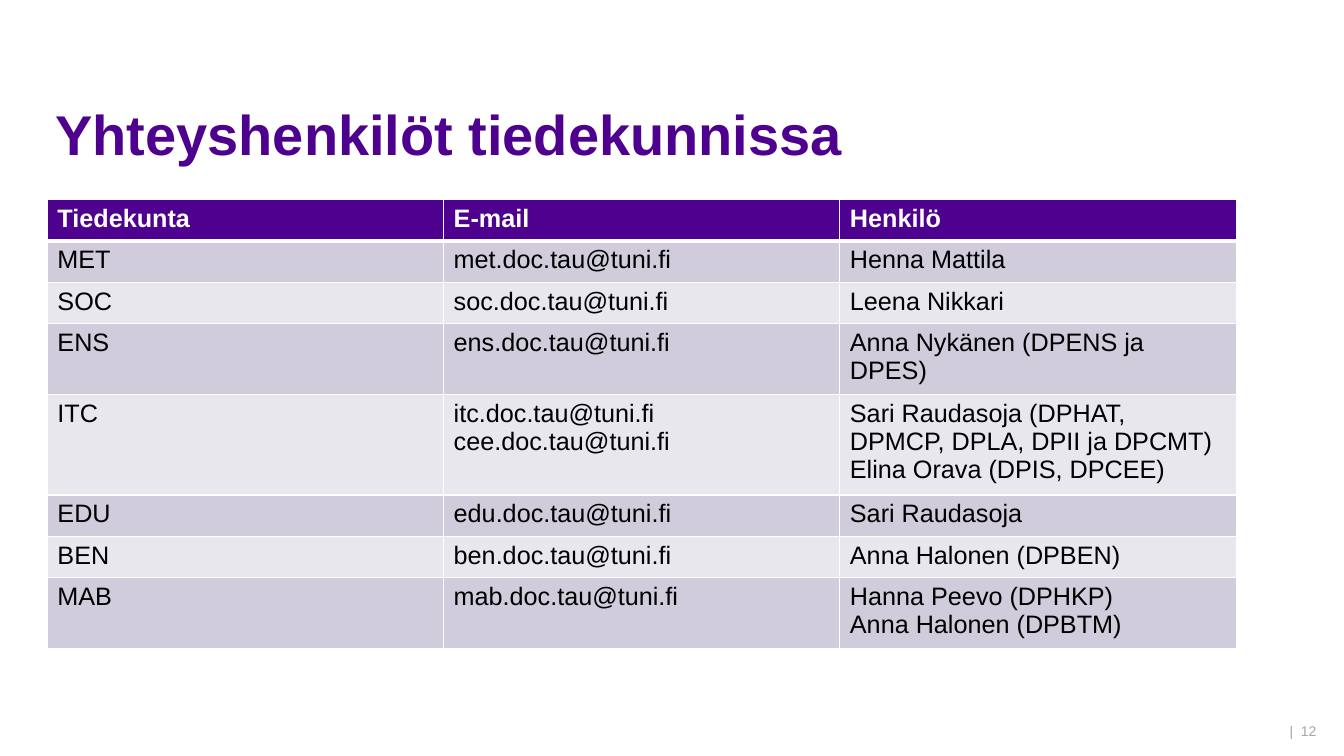
from lxml import etree
from pptx import Presentation
from pptx.dml.color import RGBColor
from pptx.enum.text import MSO_ANCHOR
from pptx.oxml.ns import qn
from pptx.util import Inches, Pt

BOTTOM = MSO_ANCHOR.BOTTOM
PURPLE = RGBColor(0x4E, 0x00, 0x8E)
WHITE = RGBColor(0xFF, 0xFF, 0xFF)
BLACK = RGBColor(0x00, 0x00, 0x00)
GREY = RGBColor(0xA6, 0xA6, 0xA6)
BANDS = [RGBColor(0xE9, 0xE7, 0xEE), RGBColor(0xD0, 0xCC, 0xDB)]
FONT = "Arial"

TITLE = "Yhteyshenkilöt tiedekunnissa"
PAGE = "|  12"
ROWS = [
    (1, "Tiedekunta", "E-mail", "Henkilö"),
    (1, "MET", "met.doc.tau@tuni.fi", "Henna Mattila"),
    (1, "SOC", "soc.doc.tau@tuni.fi", "Leena Nikkari"),
    (2, "ENS", "ens.doc.tau@tuni.fi", "Anna Nykänen (DPENS ja DPES)"),
    (3, "ITC", "itc.doc.tau@tuni.fi\ncee.doc.tau@tuni.fi",
     "Sari Raudasoja (DPHAT, DPMCP, DPLA, DPII ja DPCMT)\nElina Orava (DPIS, DPCEE)"),
    (1, "EDU", "edu.doc.tau@tuni.fi", "Sari Raudasoja"),
    (1, "BEN", "ben.doc.tau@tuni.fi", "Anna Halonen (DPBEN)"),
    (2, "MAB", "mab.doc.tau@tuni.fi", "Hanna Peevo (DPHKP)\nAnna Halonen (DPBTM)"),
]
COL_W, ROW_H, LINE_H = 3.93, 0.41, 0.28


def add_text(tf, text, size, color, bold=False):
    for i, line in enumerate(text.split("\n")):
        p = tf.add_paragraph() if i else tf.paragraphs[0]
        r = p.add_run()
        r.text = line
        r.font.name, r.font.size, r.font.bold = FONT, Pt(size), bold
        r.font.color.rgb = color
    return p


def add_box(s, left, top, width, height, left_inset):
    tf = s.shapes.add_textbox(*map(Inches, (left, top, width, height))).text_frame
    tf.word_wrap = True
    tf.vertical_anchor = BOTTOM
    tf.margin_left = Inches(left_inset)
    return tf


def add_border(cell, side, width):
    ln = etree.SubElement(cell._tc.get_or_add_tcPr(), qn(f"a:ln{side}"), w=str(Pt(width)))
    fill = etree.SubElement(ln, qn("a:solidFill"))
    etree.SubElement(fill, qn("a:srgbClr"), val=str(WHITE))


def add_contacts(s):
    heights = [max(ROW_H, 0.1 + LINE_H * row[0]) for row in ROWS]
    table = s.shapes.add_table(len(ROWS), 3, Inches(0.47), Inches(1.98),
                               Inches(3 * COL_W), Inches(sum(heights))).table
    for column in table.columns:
        column.width = Inches(COL_W)
    for i, (_, *texts) in enumerate(ROWS):
        table.rows[i].height = Inches(heights[i])
        header = i == 0
        for j, text in enumerate(texts):
            cell = table.cell(i, j)
            for side in "LRTB":
                under_header = (i, side) in ((0, "B"), (1, "T"))
                add_border(cell, side, 3 if under_header else 1)
            cell.fill.solid()
            cell.fill.fore_color.rgb = PURPLE if header else BANDS[i % 2]
            add_text(cell.text_frame, text, 18, WHITE if header else BLACK, header)


def main():
    prs = Presentation()
    prs.slide_width, prs.slide_height = Inches(13.33), Inches(7.5)
    s = prs.slides.add_slide(prs.slide_layouts[6])
    p = add_text(add_box(s, 0.45, 1, 11.5, 0.71, 0.1), TITLE, 40, PURPLE, True)
    p.line_spacing = 0.9
    add_contacts(s)
    add_text(add_box(s, 12.79, 7.1, 0.41, 0.28, 0), PAGE, 10, GREY)
    prs.save("out.pptx")


if __name__ == "__main__":
    main()
